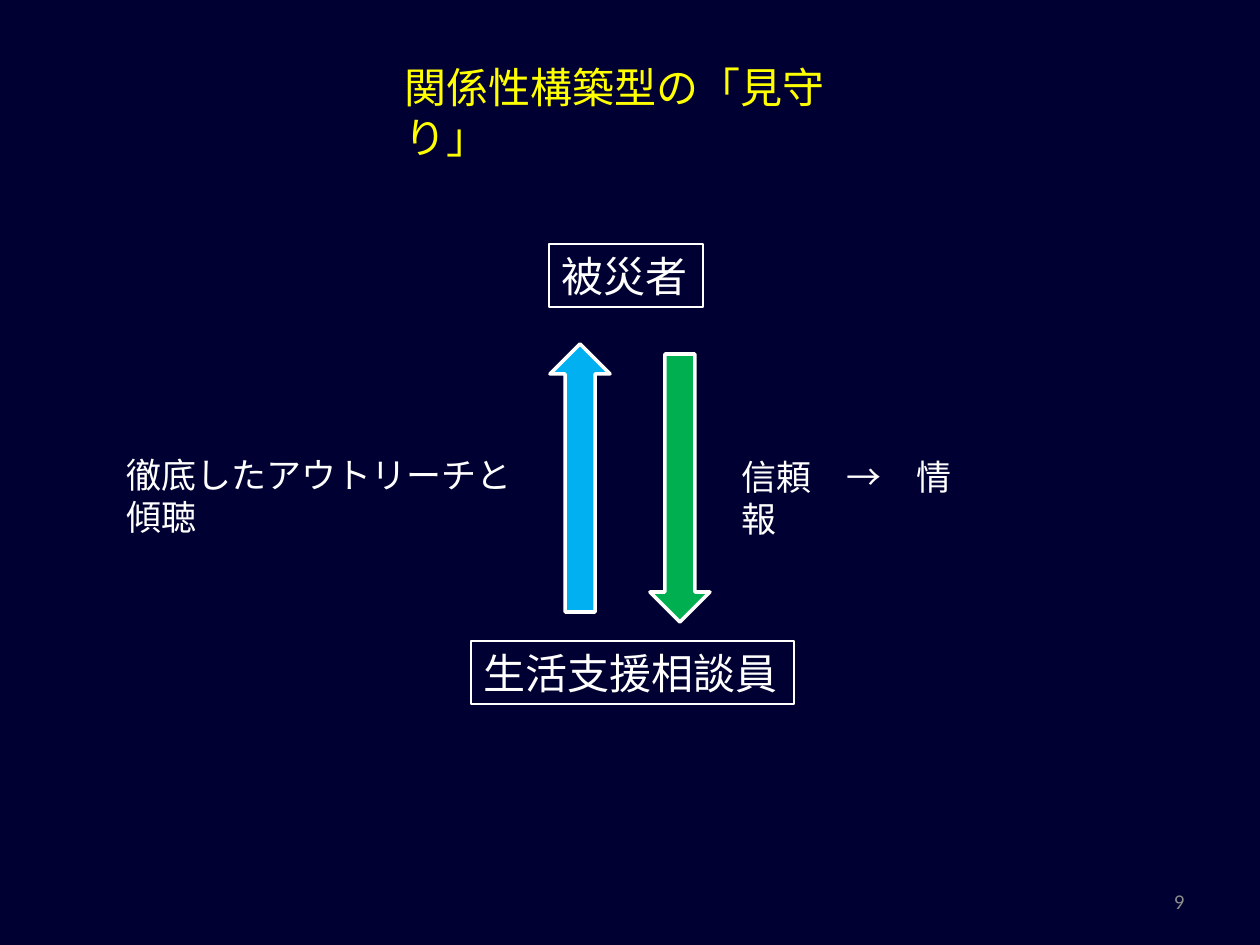
from dataclasses import dataclass
from typing import NamedTuple

from pptx import Presentation
from pptx.dml.color import RGBColor
from pptx.enum.shapes import MSO_SHAPE
from pptx.enum.text import MSO_ANCHOR, MSO_AUTO_SIZE, PP_ALIGN
from pptx.util import Emu, Pt

DOWN_ARROW = MSO_SHAPE.DOWN_ARROW
TOP, MIDDLE = MSO_ANCHOR.TOP, MSO_ANCHOR.MIDDLE
LEFT, RIGHT = PP_ALIGN.LEFT, PP_ALIGN.RIGHT
FIT_TEXT = MSO_AUTO_SIZE.SHAPE_TO_FIT_TEXT
EMU_PER_PX = 914400 / 126


@dataclass(frozen=True)
class Theme:
    background: str = "000032"
    title: str = "FFFF00"
    text: str = "FFFFFF"
    outline: str = "FFFFFF"
    outreach: str = "00B0F0"
    trust: str = "00B050"
    page_number: str = "8C8C8C"
    font: str = "Arial"
    page_number_font: str = "Calibri"
    heading_size: int = 24
    label_size: int = 20
    page_number_size: int = 12
    border_width: float = 0.75
    arrow_line_width: float = 2


class Box(NamedTuple):
    left: int
    top: int
    width: int
    height: int


class Caption(NamedTuple):
    text: str
    box: Box


class Arrow(NamedTuple):
    box: Box
    color: str
    rotation: int


THEME = Theme()
TITLE = Caption("関係性構築型の「見守り」", Box(392, 55, 481, 63))
PAGE_NUMBER = Caption("9", Box(903, 876, 294, 50))
PEOPLE = (
    Caption("被災者", Box(549, 244, 154, 63)),
    Caption("生活支援相談員", Box(471, 641, 323, 63)),
)
ARROWS = (
    Arrow(Box(650, 354, 60, 268), THEME.trust, 0),
    Arrow(Box(550, 344, 60, 268), THEME.outreach, 180),
)
EXCHANGES = (
    Caption("徹底したアウトリーチと傾聴", Box(114, 447, 435, 55)),
    Caption("信頼　→　情報", Box(729, 449, 249, 55)),
)


def px(length: int) -> Emu:
    return Emu(round(length * EMU_PER_PX))


def emu_box(box: Box) -> list[Emu]:
    return [px(length) for length in box]


def rgb(color: str) -> RGBColor:
    return RGBColor.from_string(color)


def add_text(slide, caption: Caption, *, size: int, color: str = THEME.text,
             font: str = THEME.font, align=LEFT, anchor=TOP,
             grow: bool = True, bordered: bool = False) -> None:
    textbox = slide.shapes.add_textbox(*emu_box(caption.box))
    if bordered:
        textbox.line.color.rgb = rgb(THEME.outline)
        textbox.line.width = Pt(THEME.border_width)
    frame = textbox.text_frame
    frame.word_wrap = True
    frame.vertical_anchor = anchor
    if grow:
        frame.auto_size = FIT_TEXT
    paragraph = frame.paragraphs[0]
    paragraph.alignment = align
    run = paragraph.add_run()
    run.text = caption.text
    run.font.name = font
    run.font.size = Pt(size)
    run.font.color.rgb = rgb(color)


def add_arrow(slide, arrow: Arrow) -> None:
    shape = slide.shapes.add_shape(DOWN_ARROW, *emu_box(arrow.box))
    shape.rotation = arrow.rotation
    shape.shadow.inherit = False
    shape.fill.solid()
    shape.fill.fore_color.rgb = rgb(arrow.color)
    shape.line.color.rgb = rgb(THEME.outline)
    shape.line.width = Pt(THEME.arrow_line_width)


def main() -> None:
    presentation = Presentation()
    presentation.slide_width = px(1260)
    presentation.slide_height = px(945)
    slide = presentation.slides.add_slide(presentation.slide_layouts[6])
    slide.background.fill.solid()
    slide.background.fill.fore_color.rgb = rgb(THEME.background)

    add_text(slide, PAGE_NUMBER, size=THEME.page_number_size,
             color=THEME.page_number, font=THEME.page_number_font,
             align=RIGHT, anchor=MIDDLE, grow=False)
    add_text(slide, TITLE, size=THEME.heading_size, color=THEME.title)
    for person in PEOPLE:
        add_text(slide, person, size=THEME.heading_size, bordered=True)
    for arrow in ARROWS:
        add_arrow(slide, arrow)
    for exchange in EXCHANGES:
        add_text(slide, exchange, size=THEME.label_size)

    presentation.save("out.pptx")


if __name__ == "__main__":
    main()
